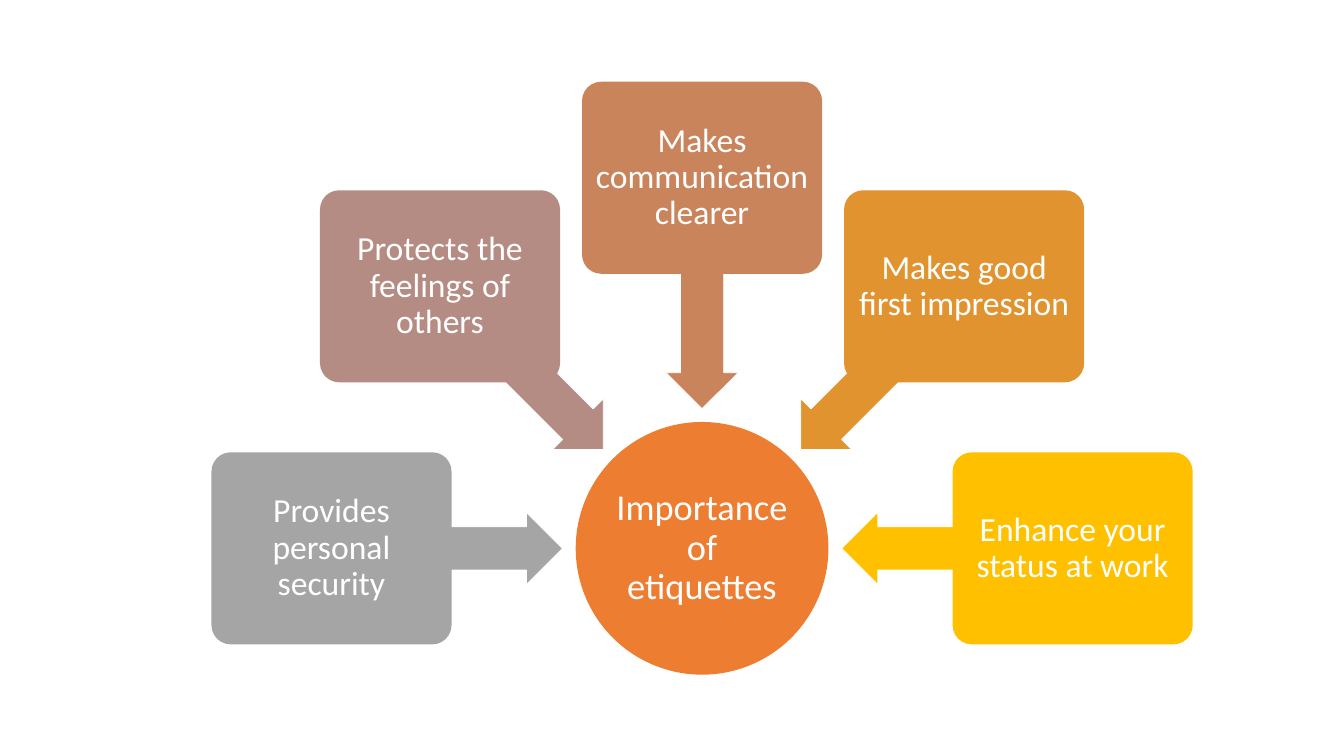
"""Build a radial slide on why etiquette matters."""
from math import cos, radians, sin

from pptx import Presentation
from pptx.dml.color import RGBColor
from pptx.enum.shapes import MSO_SHAPE
from pptx.enum.text import MSO_ANCHOR, PP_ALIGN
from pptx.util import Pt

HUB_X, HUB_Y = 501.5, 391.7
REASONS = [
    ("Provides personal security", "A5A5A5"),
    ("Protects the feelings of others", "B48C83"),
    ("Makes communication clearer", "C9845C"),
    ("Makes good first impression", "E19330"),
    ("Enhance your status at work", "FFC000"),
]

deck = Presentation()
deck.slide_width, deck.slide_height = Pt(960), Pt(540)
slide = deck.slides.add_slide(deck.slide_layouts[6])


def add_shape(kind, turn, reach, wide, high, fill):
    """Add a filled shape centred at a given angle and reach from the hub."""
    x = HUB_X + reach * cos(radians(turn))
    y = HUB_Y + reach * sin(radians(turn))
    shape = slide.shapes.add_shape(
        kind, Pt(x - wide / 2), Pt(y - high / 2), Pt(wide), Pt(high))
    shape.shadow.inherit = False
    shape.fill.solid()
    shape.fill.fore_color.rgb = RGBColor.from_string(fill)
    shape.line.fill.background()
    return shape


def add_label(shape, text, size, inset):
    """Write centred white text inside a shape."""
    frame = shape.text_frame
    frame.word_wrap = True
    frame.vertical_anchor = MSO_ANCHOR.MIDDLE
    frame.margin_left = frame.margin_right = Pt(inset)
    frame.margin_top = frame.margin_bottom = Pt(inset)
    frame.text = text
    line = frame.paragraphs[0]
    line.alignment = PP_ALIGN.CENTER
    line.line_spacing = 0.9
    font = line.runs[0].font
    font.name, font.size = "Calibri", Pt(size)
    font.color.rgb = RGBColor.from_string("FFFFFF")


hub = add_shape(MSO_SHAPE.OVAL, 0, 0, 180.5, 180.5, "ED7D31")
add_label(hub, "Importance of etiquettes", 26, 1.3)

for step, (text, fill) in enumerate(REASONS):
    turn = 180 + 45 * step
    arrow = add_shape(MSO_SHAPE.LEFT_ARROW, turn, 182.3, 165, 51.4, fill)
    arrow.rotation = turn % 360
    arrow.adjustments[0] = 0.6
    arrow.adjustments[1] = 0.5
    arrow.line.color.rgb = RGBColor.from_string("FFFFFF")
    arrow.line.width = Pt(0.5)

    box = add_shape(MSO_SHAPE.ROUNDED_RECTANGLE, turn, 264.7, 171.5, 137.2, fill)
    box.adjustments[0] = 0.1
    add_label(box, text, 24, 3.3)

deck.save("out.pptx")
